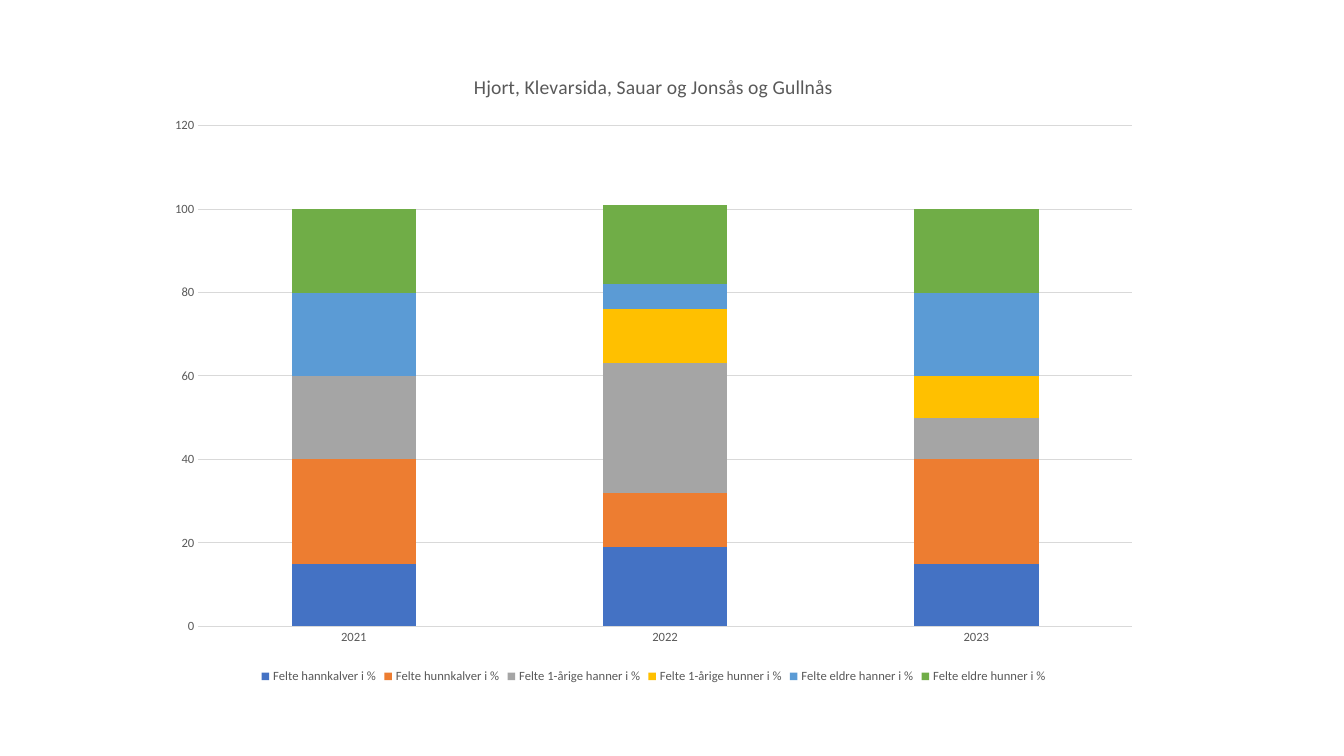
from dataclasses import dataclass

from pptx import Presentation
from pptx.chart.axis import _BaseAxis
from pptx.chart.data import CategoryChartData
from pptx.dml.color import RGBColor
from pptx.enum.chart import XL_CHART_TYPE, XL_LEGEND_POSITION, XL_TICK_MARK
from pptx.text.text import Font
from pptx.util import Cm, Pt

STACKED = XL_CHART_TYPE.COLUMN_STACKED
BOTTOM = XL_LEGEND_POSITION.BOTTOM
NO_TICK = XL_TICK_MARK.NONE

FONT = "Calibri"
COLORS = {
    "text": "595959",
    "grid": "D9D9D9",
    "blue": "4472C4",
    "orange": "ED7D31",
    "gray": "A5A5A5",
    "yellow": "FFC000",
    "sky": "5B9BD5",
    "green": "70AD47",
}


@dataclass(frozen=True)
class DeerGroup:
    name: str
    percents: tuple[int, ...]
    color: str


TITLE = "Hjort, Klevarsida, Sauar og Jonsås og Gullnås"
YEARS = ("2021", "2022", "2023")
GROUPS = (
    DeerGroup("Felte hannkalver i %", (15, 19, 15), "blue"),
    DeerGroup("Felte hunnkalver i %", (25, 13, 25), "orange"),
    DeerGroup("Felte 1-årige hanner i %", (20, 31, 10), "gray"),
    DeerGroup("Felte 1-årige hunner i %", (0, 13, 10), "yellow"),
    DeerGroup("Felte eldre hanner i %", (20, 6, 20), "sky"),
    DeerGroup("Felte eldre hunner i %", (20, 19, 20), "green"),
)


def rgb(name: str) -> RGBColor:
    return RGBColor.from_string(COLORS[name])


def style_font(font: Font, size: float) -> None:
    font.name = FONT
    font.size = Pt(size)
    font.bold = False
    font.color.rgb = rgb("text")


def style_axis(axis: _BaseAxis) -> None:
    axis.major_tick_mark = NO_TICK
    axis.minor_tick_mark = NO_TICK
    style_font(axis.tick_labels.font, 9)


def main() -> None:
    prs = Presentation()
    prs.slide_width, prs.slide_height = Cm(33.87), Cm(19.05)
    s = prs.slides.add_slide(prs.slide_layouts[6])

    # Stacked columns, one per year
    data = CategoryChartData()
    data.categories = YEARS
    for group in GROUPS:
        data.add_series(group.name, group.percents)
    chart = s.shapes.add_chart(
        STACKED, Cm(3.91), Cm(1.3), Cm(25.12), Cm(16.03), data
    ).chart
    style_font(chart.font, 10)
    plot = chart.plots[0]
    plot.gap_width, plot.overlap = 150, 100
    plot.vary_by_categories = False
    for series, group in zip(plot.series, GROUPS):
        series.format.fill.solid()
        series.format.fill.fore_color.rgb = rgb(group.color)

    # Title
    chart.has_title = True
    tf = chart.chart_title.text_frame
    tf.text = TITLE
    style_font(tf.paragraphs[0].font, 14)
    chart.chart_title.include_in_layout = False

    # Axes and gridlines
    years, percents = chart.category_axis, chart.value_axis
    for axis in (years, percents):
        style_axis(axis)
    percents.format.line.fill.background()
    percents.has_major_gridlines = True
    for line in (years.format.line, percents.major_gridlines.format.line):
        line.color.rgb = rgb("grid")
        line.width = Pt(0.75)

    # Legend
    chart.has_legend = True
    chart.legend.position = BOTTOM
    chart.legend.include_in_layout = False
    style_font(chart.legend.font, 9)

    prs.save("out.pptx")


if __name__ == "__main__":
    main()
